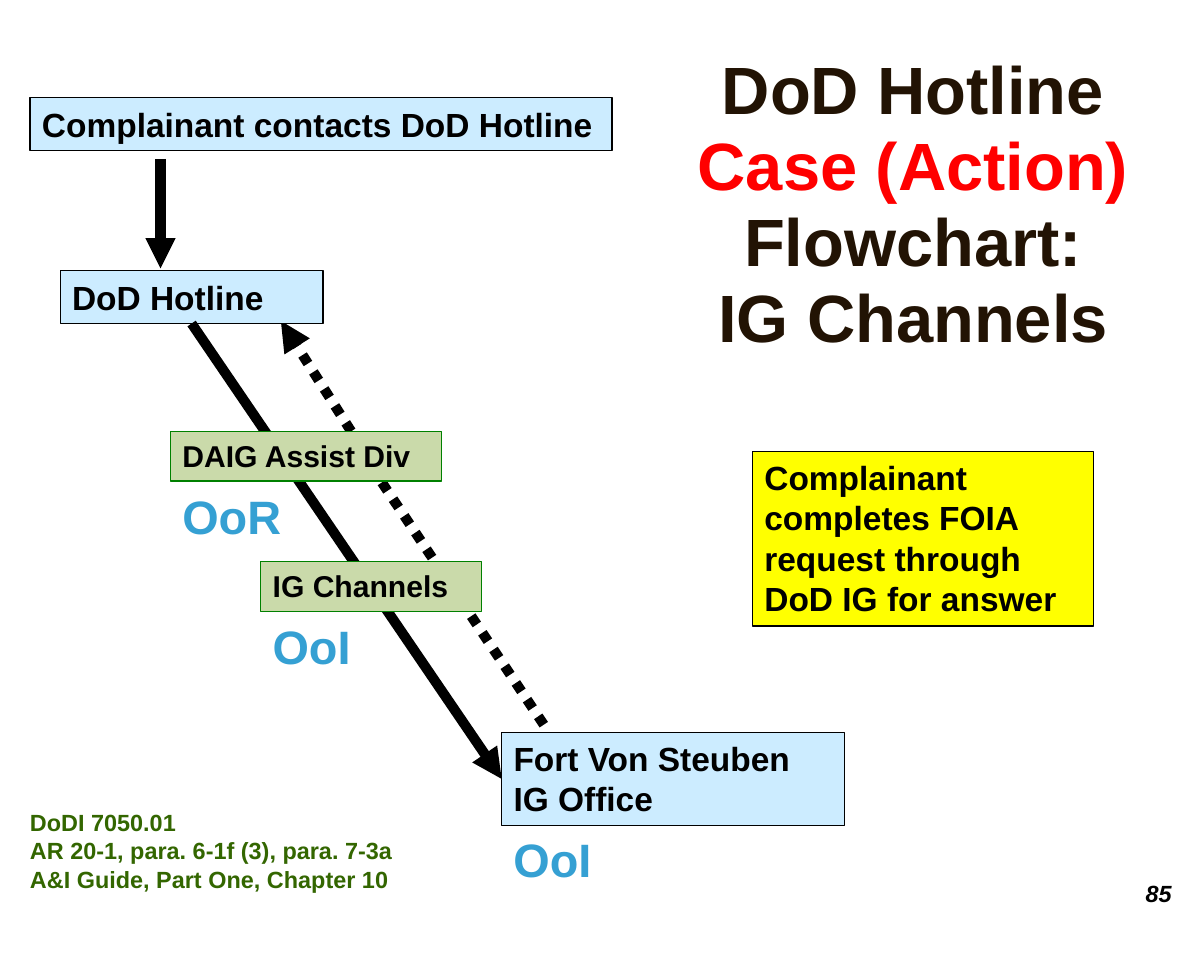
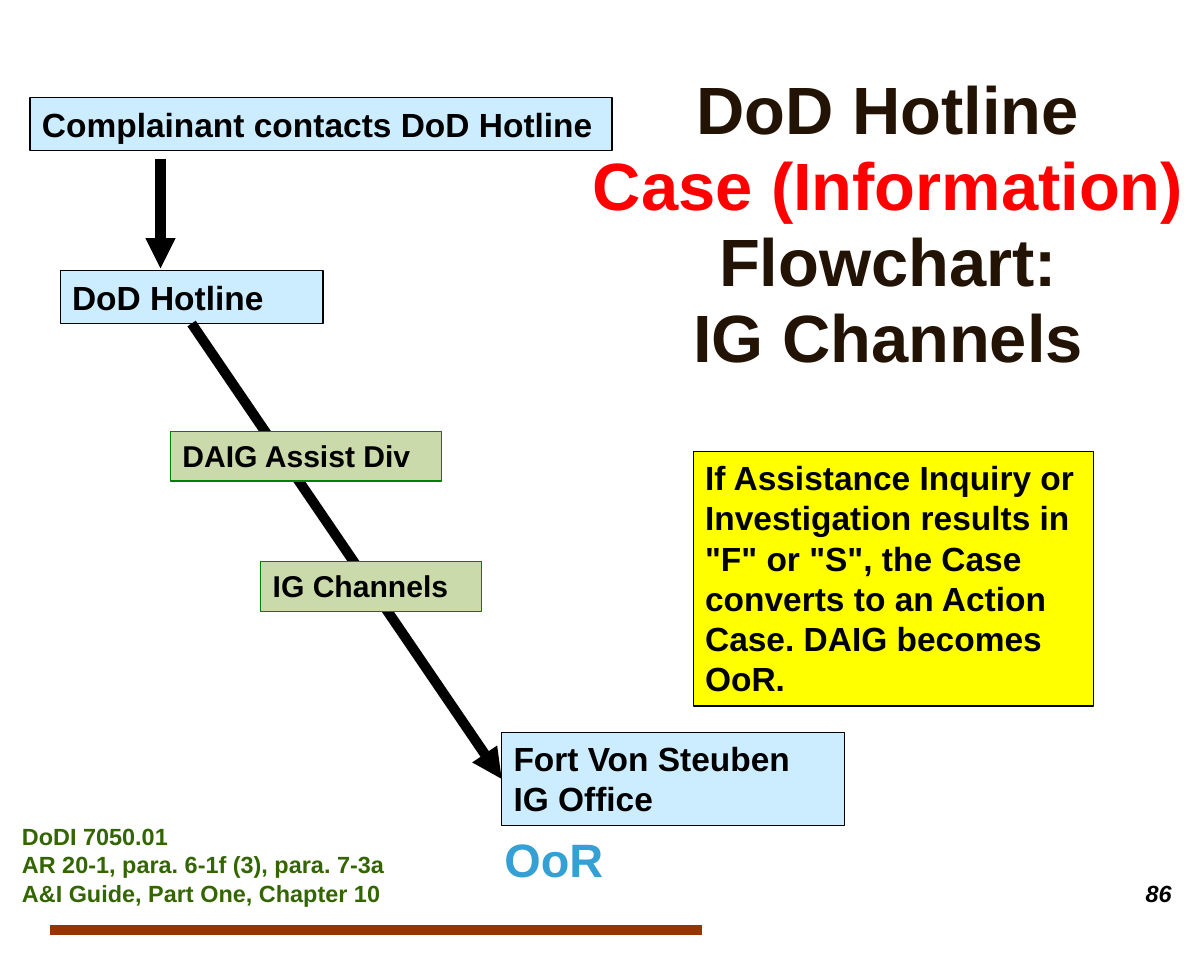
from lxml import etree
from pptx import Presentation
from pptx.dml.color import RGBColor
from pptx.enum.dml import MSO_LINE
from pptx.enum.shapes import MSO_CONNECTOR, MSO_SHAPE
from pptx.enum.text import MSO_ANCHOR, MSO_AUTO_SIZE, PP_ALIGN
from pptx.oxml.ns import qn
from pptx.util import Inches, Pt

RECT = MSO_SHAPE.RECTANGLE
LINE = MSO_CONNECTOR.STRAIGHT
DOTS = MSO_LINE.ROUND_DOT
TOP, MID = MSO_ANCHOR.TOP, MSO_ANCHOR.MIDDLE
GROW, FIXED = MSO_AUTO_SIZE.SHAPE_TO_FIT_TEXT, MSO_AUTO_SIZE.NONE
LEFT, CENTER = PP_ALIGN.LEFT, PP_ALIGN.CENTER
BOTTOM_SIDE, LEFT_SIDE = 2, 1

FONT = "Arial"
BLACK = RGBColor(0x00, 0x00, 0x00)
BROWN = RGBColor(0x22, 0x13, 0x04)
RED = RGBColor(0xFF, 0x00, 0x00)
SKY = RGBColor(0xCC, 0xEC, 0xFF)
SAGE = RGBColor(0xCA, 0xDA, 0xAA)
GREEN = RGBColor(0x00, 0x80, 0x00)
YELLOW = RGBColor(0xFF, 0xFF, 0x00)
BLUE = RGBColor(0x35, 0xA0, 0xD3)
MOSS = RGBColor(0x33, 0x66, 0x00)
RUST = RGBColor(0x99, 0x33, 0x00)

# Twelve grid cells to the inch: 120 columns by 96 rows
CELL = Inches(1) / 12
FLOW_AT = (3, 9.75)
SOURCES = ("DoDI 7050.01\nAR 20-1, para. 6-1f (3), para. 7-3a\n"
           "A&I Guide, Part One, Chapter 10")


def cells(*nums):
    return [round(num * CELL) for num in nums]


def style(frame, size, color=BLACK, slant=False):
    for para in frame.paragraphs:
        para.alignment = LEFT
        for run in para.runs:
            font = run.font
            font.name, font.size, font.bold = FONT, Pt(size), True
            font.color.rgb = color
            if slant:
                font.italic = True


def add_box(slide, spot, text, fill, edge=BLACK, size=20):
    box = slide.shapes.add_shape(RECT, *cells(*spot))
    box.shadow.inherit = False
    box.fill.solid()
    box.fill.fore_color.rgb = fill
    box.line.color.rgb = edge
    box.line.width = Pt(0.75)
    frame = box.text_frame
    frame.word_wrap, frame.vertical_anchor = True, TOP
    frame.auto_size = GROW
    frame.text = text
    style(frame, size)
    return box


def add_label(slide, spot, text, size, color, wrap=False, slant=False):
    frame = slide.shapes.add_textbox(*cells(*spot)).text_frame
    frame.word_wrap, frame.auto_size = wrap, GROW
    frame.text = text
    style(frame, size, color, slant)


def add_line(slide, start, end, color=BLACK, head=True, dash=None):
    link = slide.shapes.add_connector(LINE, *cells(*start, *end))
    link.line.color.rgb = color
    link.line.width = Pt(6)
    if dash:
        link.line.dash_style = dash
    props = link._element.spPr
    if head:
        etree.SubElement(props.find(qn("a:ln")), qn("a:tailEnd"), type="triangle")
    etree.SubElement(props, qn("a:effectLst"))
    return link


def set_master(deck):
    """Give every title its size, weight and font."""
    base = deck.slide_master.element.find(
        ".//" + qn("p:titleStyle") + "/" + qn("a:lvl1pPr") + "/" + qn("a:defRPr"))
    base.set("sz", "4000")
    base.set("b", "1")
    base.find(qn("a:latin")).set("typeface", FONT)


def add_title(slide, spot, case):
    title = slide.shapes.title
    title.left, title.top, title.width, title.height = cells(*spot)
    frame = title.text_frame
    frame.word_wrap, frame.auto_size = True, FIXED
    frame.vertical_anchor = MID
    para = frame.paragraphs[0]
    para.text = "DoD Hotline\v" + case
    para.add_run().text = " Flowchart:"
    para.add_line_break()
    para.add_run().text = "IG Channels"
    style(frame, 40, BROWN)
    para.runs[1].font.color.rgb = RED
    para.alignment, para.line_spacing = CENTER, 0.95


def add_flow(slide, left, top, roles, reply):
    """Draw the chain of offices from its top left cell."""
    def at(col, row, *size):
        return (left + col, top + row, *size)

    # Dotted way back to the hotline
    if reply:
        add_line(slide, at(51.2, 62.5), at(35, 38.25), head=False, dash=DOTS)
        add_line(slide, at(32, 33.25), at(25, 22.25), dash=DOTS)

    # Start, hotline and field office
    add_box(slide, at(0, 0, 58, 5.25), "Complainant contacts DoD Hotline", SKY)
    office = add_box(slide, at(47, 63.25, 34.2, 9.3),
                     "Fort Von Steuben\nIG Office", SKY)
    hotline = add_box(slide, at(3, 17.25, 26.2, 5.25), "DoD Hotline", SKY)

    # Way down
    add_line(slide, at(13, 6.1), at(13, 17))
    path_down = add_line(slide, at(16.1, 22.5), at(47, 67.9))
    path_down.begin_connect(hotline, BOTTOM_SIDE)
    path_down.end_connect(office, LEFT_SIDE)

    # Stations on the way
    add_box(slide, at(14, 33.25, 27, 4.95), "DAIG Assist Div", SAGE, GREEN, 18)
    add_box(slide, at(23, 46.25, 22, 4.95), "IG Channels", SAGE, GREEN, 18)

    # Roles below the boxes
    for text, col, row in roles:
        add_label(slide, at(col, row, 12.4 if text == "OoR" else 10.3, 6.85),
                  text, 28, BLUE)


def add_case(deck, case, title_at, roles, note, note_at, source_at, page,
             reply=False, rule=False):
    slide = deck.slides.add_slide(deck.slide_layouts[5])
    if rule:
        add_line(slide, (5, 92.75), (70, 92.75), RUST, head=False)
    add_title(slide, title_at, case)
    add_flow(slide, *FLOW_AT, roles, reply)
    add_label(slide, (113, 87, 5, 4), page, 14, BLACK, slant=True)
    add_box(slide, note_at, note, YELLOW)
    add_label(slide, (*source_at, 50, 9.7), SOURCES, 14, MOSS, wrap=True)


def main():
    deck = Presentation()
    deck.slide_width, deck.slide_height = Inches(10), Inches(8)
    set_master(deck)
    add_case(deck, "Case (Action)", (62, 6, 58, 29),
             [("OoR", 14, 38.25), ("OoI", 23, 51.25), ("OoI", 47, 72.5)],
             "Complainant completes FOIA request through DoD IG for answer",
             (75, 45, 34, 17.4), (1.8, 80), "85", reply=True)
    add_case(deck, "Case (Information)", (57, 8, 63, 29),
             [("OoR", 46.1, 72.5)],
             'If Assistance Inquiry or Investigation results in "F" or "S", '
             "the Case converts to an Action Case. DAIG becomes OoR.",
             (69.1, 45, 39.9, 25.4), (1, 81.4), "86", rule=True)
    deck.save("out.pptx")


if __name__ == "__main__":
    main()
